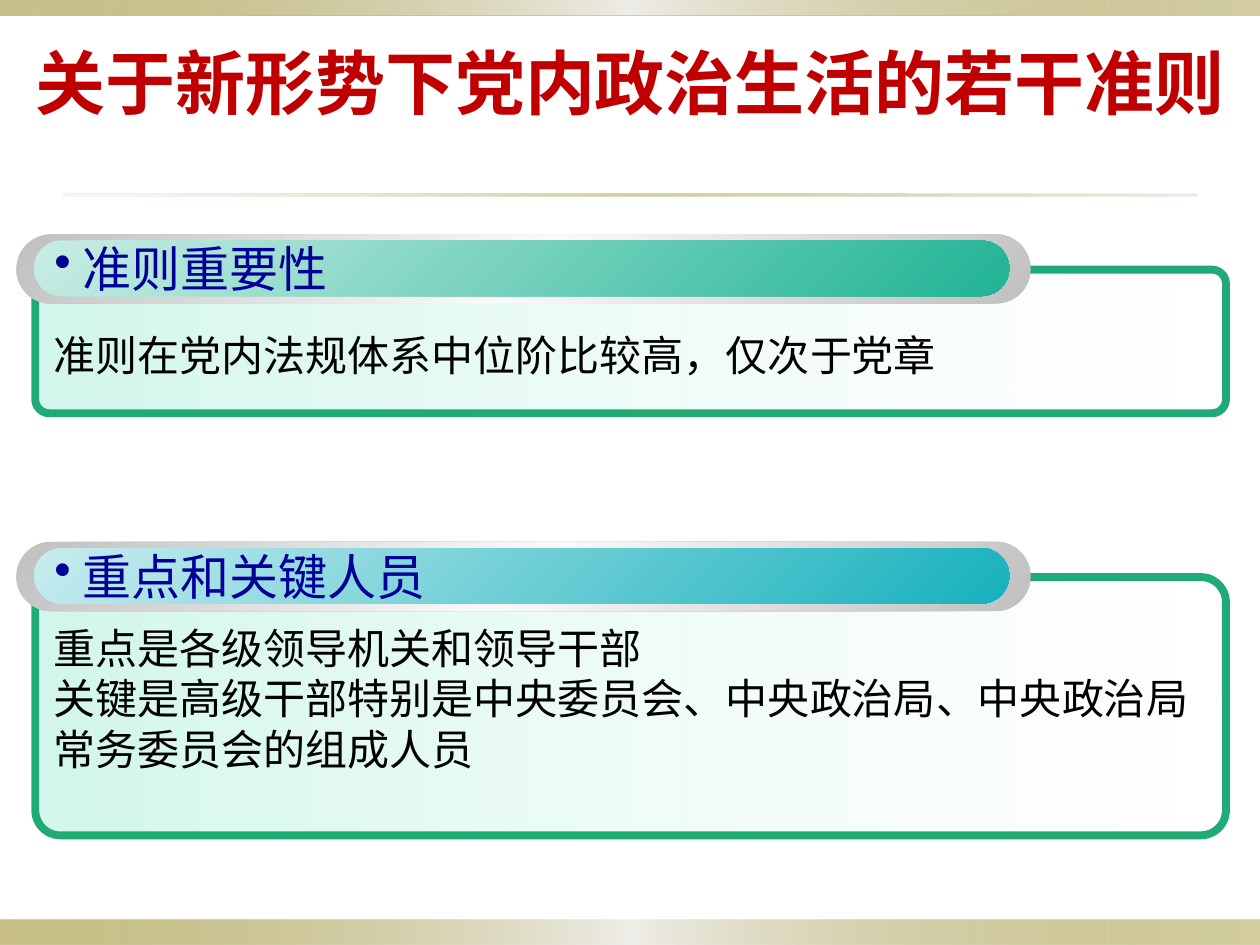
from lxml import etree
from pptx import Presentation
from pptx.dml.color import RGBColor
from pptx.enum import shapes, text
from pptx.oxml.ns import qn
from pptx.util import Inches, Pt

# Content
TITLE = "关于新形势下党内政治生活的若干准则"
SECTIONS = [
    {"heading": "准则重要性", "top": 1.86, "panel_height": 1.14,
     "body_offset": 0.71, "body_height": 0.5, "pill": "green",
     "body": ["准则在党内法规体系中位阶比较高，仅次于党章"]},
    {"heading": "重点和关键人员", "top": 4.3, "panel_height": 2.05,
     "body_offset": 0.59, "body_height": 1.31, "pill": "teal",
     "body": ["重点是各级领导机关和领导干部",
              "关键是高级干部特别是中央委员会、中央政治局、中央政治局常务委员会的组成人员"]},
]

# Gradient stops are (position, colour, opacity), all in percent
THEME = {
    "background": "FFFFFF", "title": "C00000", "heading": "000099",
    "body": "000000", "outline": "15A76F",
    "title_size": 40, "heading_size": 28, "body_size": 24,
    "title_font": "Arial", "heading_font": "Noto Sans CJK SC", "body_font": "Karla",
    "band": [(0, "918415", 50), (50, "EEEDE8", 100), (100, "918415", 40)],
    "rule": [(0, "DCD9CC", 20), (50, "918415", 40), (100, "DCD9CC", 50)],
    "panel": [(0, "D3F7ED", 100), (100, "FFFFFF", 50)],
    "rim": [(0, "C0C0C0", 100), (50, "F9F9F9", 100), (100, "C0C0C0", 100)],
    "green": [(0, "C9EDE5", 100), (100, "20B494", 100)],
    "teal": [(0, "C7ECEF", 100), (100, "17B1BD", 100)],
}
RECT = shapes.MSO_SHAPE.RECTANGLE
ROUND = shapes.MSO_SHAPE.ROUNDED_RECTANGLE


def set_alpha(color, percent):
    if percent < 100:
        etree.SubElement(color, qn("a:alpha"), val=str(percent * 1000))


def add_gradient_shape(page, kind, place, stops, angle=0, corner=None):
    shape = page.shapes.add_shape(kind, *map(Inches, place))
    shape.shadow.inherit = False
    shape.line.fill.background()
    if corner is not None:
        shape.adjustments[0] = corner
    shape.fill.gradient()
    gradient = shape._element.spPr.find(qn("a:gradFill"))
    for child in list(gradient):
        gradient.remove(child)
    stop_list = etree.SubElement(gradient, qn("a:gsLst"))
    for position, colour, opacity in stops:
        stop = etree.SubElement(stop_list, qn("a:gs"), pos=str(position * 1000))
        set_alpha(etree.SubElement(stop, qn("a:srgbClr"), val=colour), opacity)
    etree.SubElement(gradient, qn("a:lin"), ang=str(angle * 60000), scaled="0")
    return shape


def style_text(frame, role, bold=False, align=text.PP_ALIGN.LEFT):
    for para in frame.paragraphs:
        para.alignment = align
        for span in para.runs:
            span.font.size = Pt(THEME[role + "_size"])
            span.font.name = THEME[role + "_font"]
            span.font.bold = bold
            span.font.color.rgb = RGBColor.from_string(THEME[role])


def add_section(page, section):
    top = section["top"]

    # Outlined panel
    panel = add_gradient_shape(page, ROUND, (0.28, top + 0.28, 9.45, section["panel_height"]),
                               THEME["panel"], corner=0.097)
    panel.line.color.rgb = RGBColor.from_string(THEME["outline"])
    panel.line.width = Pt(4.5)
    set_alpha(panel.line._ln.find(".//" + qn("a:srgbClr")), 94)

    # Heading pill on its silver rim
    add_gradient_shape(page, ROUND, (0.13, top, 8.05, 0.55), THEME["rim"], 45, 0.5)
    pill = add_gradient_shape(page, ROUND, (0.27, top + 0.05, 7.74, 0.44),
                              THEME[section["pill"]], 45, 0.5)
    frame = pill.text_frame
    frame.text = " " + section["heading"]
    frame.word_wrap = False
    frame.vertical_anchor = text.MSO_ANCHOR.MIDDLE
    style_text(frame, "heading")
    para = frame.paragraphs[0]
    etree.SubElement(para._p.get_or_add_pPr(), qn("a:buChar"), char="•")
    etree.SubElement(para.runs[0]._r.get_or_add_rPr(), qn("a:ea"),
                     typeface=THEME["heading_font"])

    # Body text
    box = page.shapes.add_textbox(*map(Inches, (0.33, top + section["body_offset"],
                                                9.35, section["body_height"])))
    box.text_frame.word_wrap = True
    box.text_frame.auto_size = text.MSO_AUTO_SIZE.SHAPE_TO_FIT_TEXT
    box.text_frame.text = "\n".join(section["body"])
    style_text(box.text_frame, "body")


def main():
    deck = Presentation()
    deck.slide_width, deck.slide_height = Inches(10), Inches(7.5)
    page = deck.slides.add_slide(deck.slide_layouts[5])
    page.background.fill.solid()
    page.background.fill.fore_color.rgb = RGBColor.from_string(THEME["background"])

    # Edge bands and the rule under the title
    add_gradient_shape(page, RECT, (0, 7.3, 10, 0.2), THEME["band"])
    add_gradient_shape(page, RECT, (0, 0, 10, 0.12), THEME["band"])
    add_gradient_shape(page, RECT, (0.5, 1.54, 9, 0.02), THEME["rule"])

    # Title
    title = page.shapes.title
    title.left, title.top, title.width, title.height = map(Inches, (0, 0.21, 10, 0.87))
    title.text_frame.text = TITLE
    title.text_frame.vertical_anchor = text.MSO_ANCHOR.MIDDLE
    style_text(title.text_frame, "title", True, text.PP_ALIGN.CENTER)

    for section in SECTIONS:
        add_section(page, section)
    deck.save("out.pptx")


if __name__ == "__main__":
    main()
